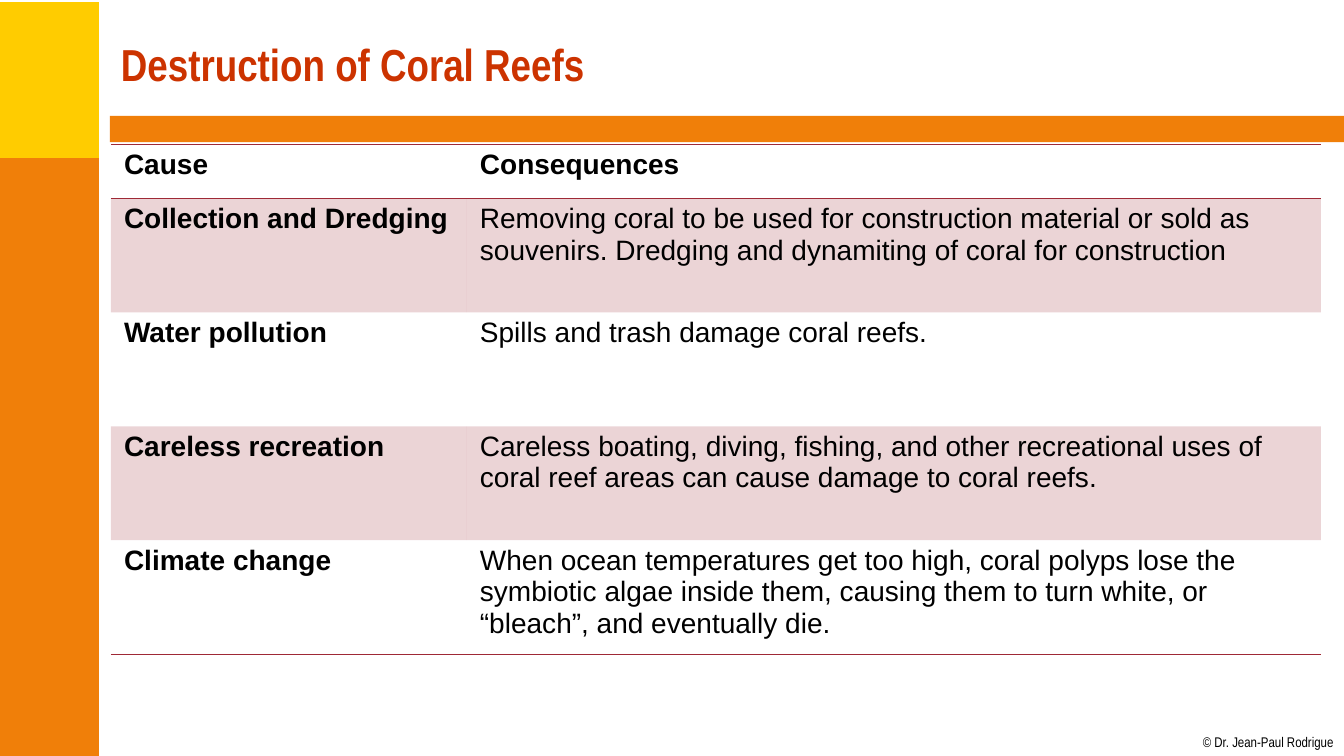
from pptx import Presentation
from pptx import util as u
from pptx.dml.color import RGBColor
from pptx.enum import shapes, text
from pptx.oxml import parse_xml
from pptx.oxml.ns import nsdecls, qn
from lxml import etree

BLACK, ORANGE, YELLOW, RED, MAROON = "000000", "F07F09", "FFCC00", "CC3300", "9F2936"

ROWS = [
    ("Cause", "Consequences"),
    ("Collection and Dredging",
     "Removing coral to be used for construction material or sold as souvenirs. "
     "Dredging and dynamiting of coral for construction"),
    ("Water pollution", "Spills and trash damage coral reefs."),
    ("Careless recreation",
     "Careless boating, diving, fishing, and other recreational uses of coral reef "
     "areas can cause damage to coral reefs."),
    ("Climate change",
     "When ocean temperatures get too high, coral polyps lose the symbiotic algae "
     "inside them, causing them to turn white, or “bleach”, and eventually die."),
]


def color(value):
    return RGBColor.from_string(value)


def box(*lengths):
    return [u.Inches(length) for length in lengths]


def assign(target, values):
    """Set each attribute of target named in values."""
    for name, value in values.items():
        setattr(target, name, value)


class ReefSlide:
    def __init__(self, slide):
        self.slide = slide

    def add_wording(self, frame, wording, size, font, ink=BLACK, bold=False):
        paragraph = frame.paragraphs[0]
        paragraph.alignment = text.PP_ALIGN.LEFT
        run = paragraph.add_run()
        run.text = wording
        assign(run.font, {"size": u.Pt(size), "name": font, "bold": bold})
        run.font.color.rgb = color(ink)

    def title(self, wording, left, top, width, height):
        shape = self.slide.shapes.title
        position = box(left, top, width, height)
        assign(shape, dict(zip(("left", "top", "width", "height"), position)))
        assign(shape.text_frame, {"vertical_anchor": text.MSO_ANCHOR.MIDDLE,
                                  "auto_size": text.MSO_AUTO_SIZE.NONE})
        self.add_wording(shape.text_frame, wording, 32, "Arial Narrow", RED, True)

    def band(self, fill, *position):
        shape = self.slide.shapes.add_shape(shapes.MSO_SHAPE.RECTANGLE, *box(*position))
        shape.shadow.inherit = False
        shape.fill.solid()
        shape.fill.fore_color.rgb = color(fill)
        shape.line.fill.background()

    def credit(self, wording, *position):
        frame = self.slide.shapes.add_textbox(*box(*position)).text_frame
        assign(frame, {"margin_left": 0, "margin_right": 0, "margin_top": 0,
                       "margin_bottom": 0, "word_wrap": False,
                       "auto_size": text.MSO_AUTO_SIZE.SHAPE_TO_FIT_TEXT})
        self.add_wording(frame, wording, 10, "Arial Narrow")

    def borders(self, cell, ruled):
        """Rule the given sides of a cell and clear the others."""
        properties = cell._tc.get_or_add_tcPr()
        for index, side in enumerate("LRTB"):
            paint = (f'<a:solidFill><a:srgbClr val="{MAROON}"/></a:solidFill>'
                     if side in ruled else "<a:noFill/>")
            properties.insert(index, parse_xml(
                f'<a:ln{side} {nsdecls("a")} w="12700">{paint}</a:ln{side}>'))

    def shade(self, cell, fill, percent):
        cell.fill.solid()
        cell.fill.fore_color.rgb = color(fill)
        tint = cell._tc.tcPr.find(".//" + qn("a:srgbClr"))
        etree.SubElement(tint, qn("a:alpha")).set("val", str(percent * 1000))

    def table(self, rows, column_widths, row_heights, left, top):
        position = box(left, top, sum(column_widths), sum(row_heights))
        table = self.slide.shapes.add_table(len(rows), len(column_widths), *position).table
        assign(table, {"first_row": False, "horz_banding": False})
        for column, width in zip(table.columns, column_widths):
            column.width = u.Inches(width)
        for row, height in zip(table.rows, row_heights):
            row.height = u.Inches(height)
        last = len(rows) - 1
        for r, wordings in enumerate(rows):
            ruled = ("T" if r in (0, 1) else "") + ("B" if r in (0, last) else "")
            for c, wording in enumerate(wordings):
                cell = table.cell(r, c)
                assign(cell, dict(zip(
                    ("margin_left", "margin_top", "margin_right", "margin_bottom"),
                    box(0.13, 0.05, 0.13, 0.05))))
                if r % 2:
                    self.shade(cell, MAROON, 20)
                else:
                    cell.fill.background()
                self.borders(cell, ruled)
                self.add_wording(cell.text_frame, wording, 20, "Arial",
                                 bold=r == 0 or c == 0)


def main():
    presentation = Presentation()
    presentation.slide_width, presentation.slide_height = box(13.33, 7.5)
    reef = ReefSlide(presentation.slides.add_slide(presentation.slide_layouts[5]))
    reef.band(YELLOW, 0, 0.02, 0.98, 1.55)
    reef.band(ORANGE, 0, 1.57, 0.98, 5.93)
    reef.band(ORANGE, 1.09, 1.15, 12.24, 0.26)
    reef.credit("© Dr. Jean-Paul Rodrigue", 11.93, 7.28, 1.31, 0.17)
    reef.title("Destruction of Coral Reefs", 1.1, 0.11, 12, 1.04)
    reef.table(ROWS, [3.53, 8.47], [0.54] + [1.13] * 4, 1.1, 1.43)
    presentation.save("out.pptx")


if __name__ == "__main__":
    main()
